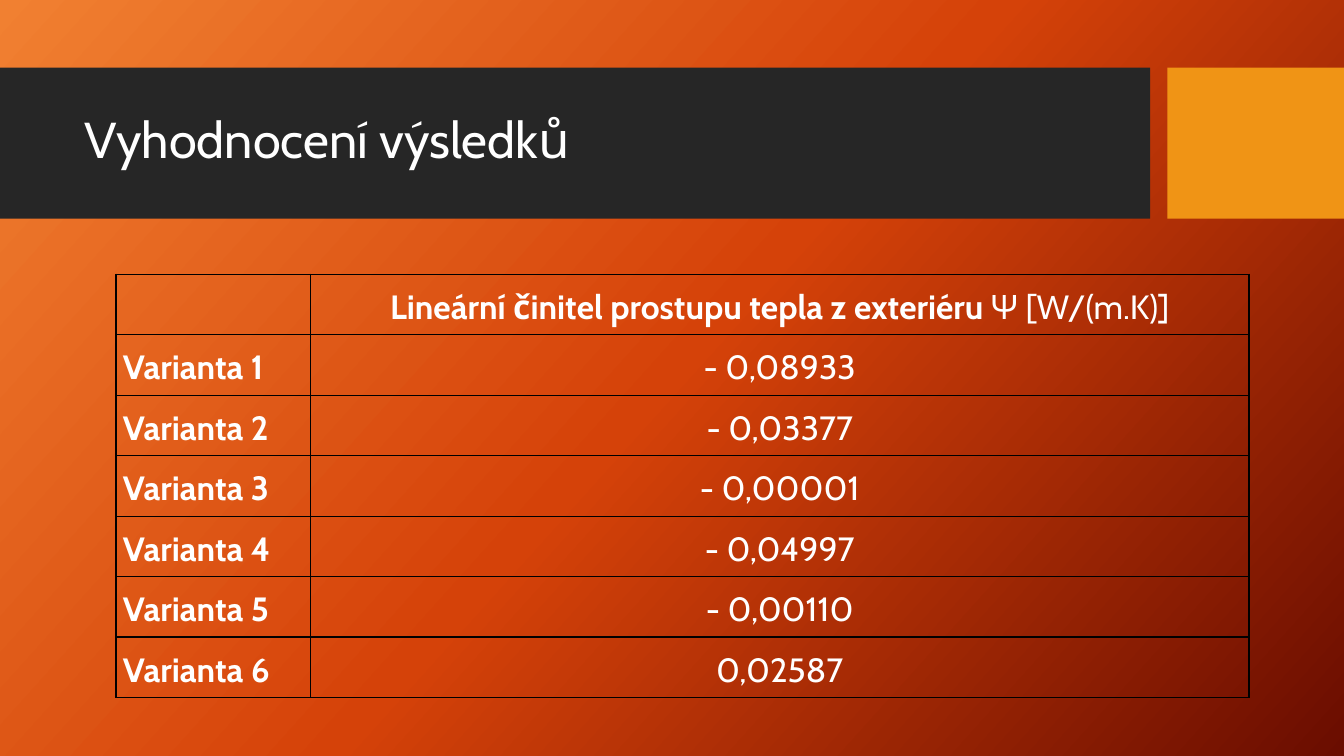
from copy import deepcopy
from dataclasses import dataclass

from lxml.etree import SubElement
from pptx import Presentation
from pptx.dml.color import RGBColor
from pptx.enum.shapes import MSO_SHAPE
from pptx.enum.text import MSO_ANCHOR, MSO_AUTO_SIZE, PP_ALIGN
from pptx.oxml.ns import qn
from pptx.slide import Slide
from pptx.table import _Cell
from pptx.text.text import _Paragraph
from pptx.util import Inches, Pt

WIDTH, HEIGHT = Inches(13.333), Inches(7.5)
FONT = "Cabin"
WHITE = RGBColor(0xFF, 0xFF, 0xFF)
BLACK = RGBColor(0x00, 0x00, 0x00)
CHARCOAL = RGBColor(0x26, 0x26, 0x26)
AMBER = RGBColor(0xF0, 0x94, 0x15)
GLOW = (
    RGBColor(0xF1, 0x80, 0x31),
    RGBColor(0xD5, 0x42, 0x09),
    RGBColor(0x6A, 0x0D, 0x00),
)
GLOW_ANGLE = 42

BAND_TOP, BAND_HEIGHT = 0.67 / 7.5, 1.5 / 7.5
ROW_HEIGHT = Inches(0.6)
LABEL_WIDTH, VALUE_WIDTH = Inches(1.93), Inches(9.31)


@dataclass(frozen=True)
class Band:
    """Header block; left and width are shares of the slide width."""
    left: float
    width: float
    color: RGBColor


@dataclass(frozen=True)
class Words:
    text: str
    bold: bool = False


@dataclass(frozen=True)
class Variant:
    label: str
    psi: str


BANDS = (
    Band(0, 11.41 / 13.333, CHARCOAL),
    Band(11.58 / 13.333, 1.753 / 13.333, AMBER),
)
HEADING = (
    Words("Lineární činitel prostupu tepla z exteriéru ", True),
    Words("Ψ [W/(m.K)]"),
)
VARIANTS = tuple(
    Variant(f"Varianta {number}", psi)
    for number, psi in enumerate(
        ("- 0,08933", "- 0,03377", "- 0,00001",
         "- 0,04997", "- 0,00110", "0,02587"), 1)
)


def paint_background(slide: Slide) -> None:
    fill = slide.background.fill
    fill.gradient()
    fill.gradient_angle = 360 - GLOW_ANGLE
    stops = slide.element.find(".//" + qn("a:gsLst"))
    stops.append(deepcopy(stops[-1]))
    for index, (stop, color) in enumerate(zip(fill.gradient_stops, GLOW)):
        stop.position = index / (len(GLOW) - 1)
        stop.color.rgb = color


def add_words(paragraph: _Paragraph, words: Words, size: int) -> None:
    run = paragraph.add_run()
    run.text = words.text
    run.font.name = FONT
    run.font.size = Pt(size)
    run.font.bold = words.bold
    run.font.color.rgb = WHITE


def add_header(slide: Slide, heading: str) -> None:
    title = slide.shapes.title
    for band in BANDS:
        block = slide.shapes.add_shape(
            MSO_SHAPE.RECTANGLE,
            int(WIDTH * band.left), int(HEIGHT * BAND_TOP),
            int(WIDTH * band.width), int(HEIGHT * BAND_HEIGHT))
        block.shadow.inherit = False
        block.fill.solid()
        block.fill.fore_color.rgb = band.color
        block.line.fill.background()
        title.element.addprevious(block.element)

    title.left, title.top = Inches(0.74), Inches(0.82)
    title.width, title.height = Inches(10.51), Inches(1.18)
    frame = title.text_frame
    frame.auto_size = MSO_AUTO_SIZE.NONE
    frame.word_wrap = True
    frame.vertical_anchor = MSO_ANCHOR.MIDDLE
    paragraph = frame.paragraphs[0]
    paragraph.alignment = PP_ALIGN.LEFT
    paragraph.line_spacing = 0.9
    add_words(paragraph, Words(heading), 36)


def outline_cell(cell: _Cell) -> None:
    """Leave the cell unfilled, with a thin black line on all four sides."""
    cell.fill.background()
    properties = cell._tc.get_or_add_tcPr()
    for index, side in enumerate(("a:lnL", "a:lnR", "a:lnT", "a:lnB")):
        border = SubElement(properties, qn(side), w=str(Pt(1)))
        paint = SubElement(border, qn("a:solidFill"))
        SubElement(paint, qn("a:srgbClr"), val=str(BLACK))
        properties.insert(index, border)


def fill_cell(cell: _Cell, content: tuple[Words, ...],
              alignment: PP_ALIGN) -> None:
    cell.margin_left = cell.margin_right = Inches(0.07)
    cell.margin_top = cell.margin_bottom = 0
    cell.vertical_anchor = MSO_ANCHOR.MIDDLE
    paragraph = cell.text_frame.paragraphs[0]
    paragraph.alignment = alignment
    paragraph.line_spacing = 1.15
    for words in content:
        add_words(paragraph, words, 24)
    outline_cell(cell)


def add_results(slide: Slide) -> None:
    rows = [((), HEADING)] + [
        ((Words(variant.label, True),), (Words(variant.psi),))
        for variant in VARIANTS
    ]
    results = slide.shapes.add_table(
        len(rows), 2, Inches(1.15), Inches(2.72),
        LABEL_WIDTH + VALUE_WIDTH, ROW_HEIGHT * len(rows)).table
    results.first_row = results.horz_banding = False
    results.columns[0].width = LABEL_WIDTH
    results.columns[1].width = VALUE_WIDTH
    for index, (label, value) in enumerate(rows):
        results.rows[index].height = ROW_HEIGHT
        fill_cell(results.cell(index, 0), label, PP_ALIGN.LEFT)
        fill_cell(results.cell(index, 1), value, PP_ALIGN.CENTER)


def main() -> None:
    deck = Presentation()
    deck.slide_width, deck.slide_height = WIDTH, HEIGHT
    slide = deck.slides.add_slide(deck.slide_layouts.get_by_name("Title Only"))
    paint_background(slide)
    add_header(slide, "Vyhodnocení výsledků")
    add_results(slide)
    deck.save("out.pptx")


if __name__ == "__main__":
    main()
